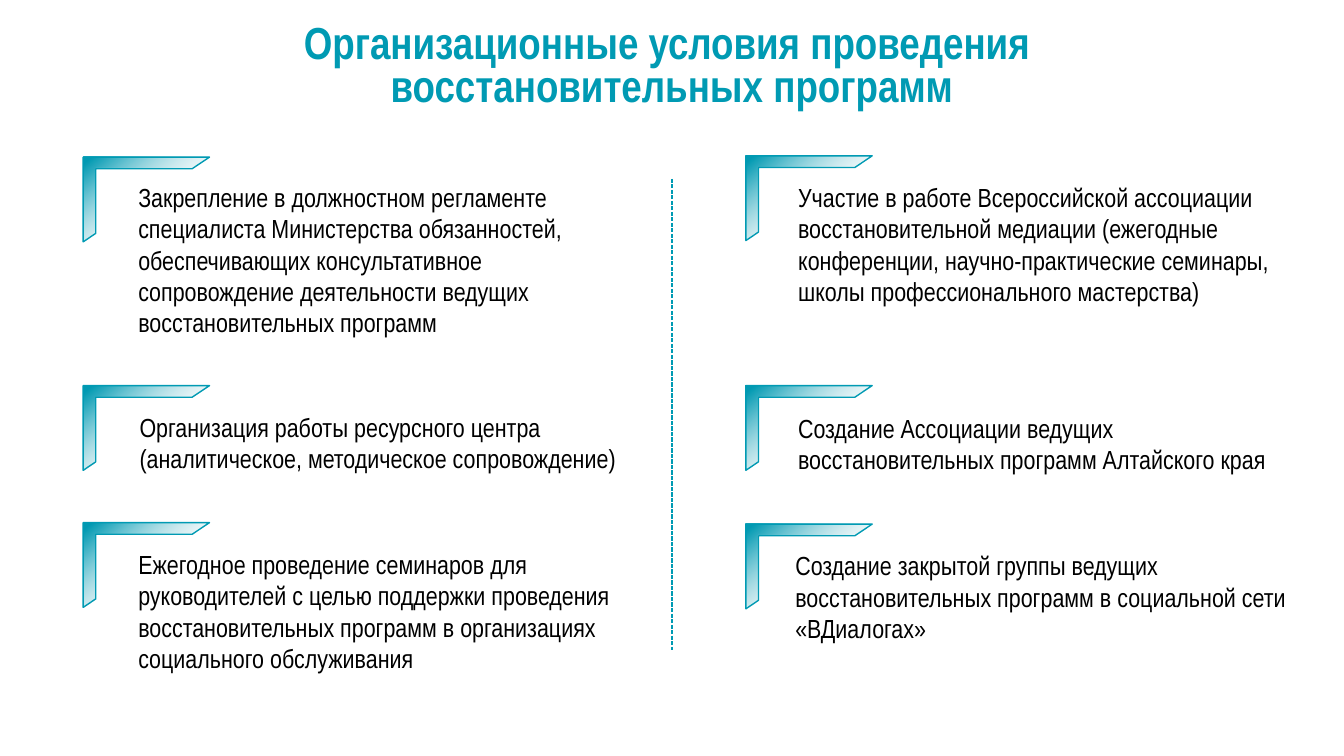
"""Build the slide on organisational conditions for restorative programmes."""
from dataclasses import dataclass

from lxml import etree
from pptx import Presentation
from pptx.dml.color import RGBColor
from pptx.enum.dml import MSO_LINE
from pptx.enum.shapes import MSO_CONNECTOR, MSO_SHAPE
from pptx.enum.text import MSO_ANCHOR, MSO_AUTO_SIZE, PP_ALIGN
from pptx.oxml.ns import qn
from pptx.util import Pt

HALF_FRAME = MSO_SHAPE.HALF_FRAME
STRAIGHT = MSO_CONNECTOR.STRAIGHT
SYS_DASH = MSO_LINE.SQUARE_DOT
TOP = MSO_ANCHOR.TOP
GROW = MSO_AUTO_SIZE.SHAPE_TO_FIT_TEXT
LEFT, CENTER = PP_ALIGN.LEFT, PP_ALIGN.CENTER

TEAL = RGBColor(0x00, 0x9A, 0xB3)
PALE = RGBColor(0xF2, 0xF2, 0xF2)
BLACK = RGBColor(0x00, 0x00, 0x00)
FONT = "Arial Narrow"

SLIDE_W, SLIDE_H = 720, 405
FRAME_W, FRAME_H = 67.7, 45.4
FRAME_LEFT, FRAME_RIGHT = 44.6, 399.6
TEXT_W = 283
GRADIENT = ((26, PALE, 0), (77, TEAL, 57), (96, TEAL, 100))


@dataclass
class Condition:
    """A statement with its corner frame; lengths in points."""
    frame_x: float
    frame_y: float
    x: float
    y: float
    h: float
    text: str


TITLE = ("Организационные условия проведения ", "восстановительных программ")
CONDITIONS = (
    Condition(FRAME_LEFT, 84.2, 67, 93.6, 92,
              "Закрепление в должностном регламенте специалиста Министерства "
              "обязанностей, обеспечивающих консультативное сопровождение "
              "деятельности ведущих восстановительных программ"),
    Condition(FRAME_LEFT, 206.6, 67.7, 216.7, 41,
              "Организация работы ресурсного центра "
              "(аналитическое, методическое сопровождение)"),
    Condition(FRAME_LEFT, 280, 67, 290.2, 75,
              "Ежегодное проведение семинаров для руководителей с целью "
              "поддержки проведения восстановительных программ в организациях "
              "социального обслуживания"),
    Condition(FRAME_RIGHT, 83.5, 420.5, 93.6, 75,
              "Участие в работе Всероссийской ассоциации восстановительной "
              "медиации (ежегодные конференции, научно-практические семинары, "
              "школы профессионального мастерства)"),
    Condition(FRAME_RIGHT, 206.6, 420.5, 217.4, 41,
              "Создание Ассоциации ведущих восстановительных программ "
              "Алтайского края"),
    Condition(FRAME_RIGHT, 280.8, 419, 290.9, 58,
              "Создание закрытой группы ведущих восстановительных программ "
              "в социальной сети «ВДиалогах»"),
)


def write_text(sp, *lines: str, size: float = 14, color: RGBColor = BLACK,
               bold: bool = False, align: PP_ALIGN = LEFT,
               spacing: float = 1.0) -> None:
    """Fill a shape with one formatted paragraph per line."""
    tf = sp.text_frame
    tf.word_wrap = True
    tf.auto_size = GROW
    tf.vertical_anchor = TOP
    for i, line in enumerate(lines):
        p = tf.add_paragraph() if i else tf.paragraphs[0]
        p.alignment = align
        p.line_spacing = spacing
        r = p.add_run()
        r.text = line
        r.font.name = FONT
        r.font.size = Pt(size)
        r.font.bold = bold
        r.font.color.rgb = color


def add_frame(s, x: float, y: float) -> None:
    """Draw a corner frame that fades away from its corner."""
    sp = s.shapes.add_shape(HALF_FRAME, Pt(x), Pt(y), Pt(FRAME_W), Pt(FRAME_H))
    sp.shadow.inherit = False
    sp.adjustments[0] = 0.138
    sp.adjustments[1] = 0.149
    sp.line.color.rgb = TEAL
    sp.line.width = Pt(0.75)
    sp.fill.gradient()
    sp.fill.gradient_angle = 130
    stops = next(sp._element.iter(qn("a:gsLst")))
    for old in list(stops):
        stops.remove(old)
    for pos, color, alpha in GRADIENT:
        gs = etree.SubElement(stops, qn("a:gs"), pos=str(pos * 1000))
        clr = etree.SubElement(gs, qn("a:srgbClr"), val=str(color))
        etree.SubElement(clr, qn("a:alpha"), val=str(alpha * 1000))


def add_condition(s, c: Condition) -> None:
    """Draw one statement and its frame."""
    sp = s.shapes.add_textbox(Pt(c.x), Pt(c.y), Pt(TEXT_W), Pt(c.h))
    write_text(sp, c.text)
    add_frame(s, c.frame_x, c.frame_y)


def add_divider(s, x: float, top: float, bottom: float) -> None:
    """Draw the dashed line between the columns."""
    line = s.shapes.add_connector(STRAIGHT, Pt(x), Pt(top), Pt(x), Pt(bottom))
    line.line.color.rgb = TEAL
    line.line.width = Pt(0.75)
    line.line.dash_style = SYS_DASH
    etree.SubElement(line._element.spPr, qn("a:effectLst"))


def main() -> None:
    """Build and save the slide."""
    prs = Presentation()
    prs.slide_width, prs.slide_height = Pt(SLIDE_W), Pt(SLIDE_H)
    s = prs.slides.add_slide(prs.slide_layouts[5])
    title = s.shapes.title
    title.left, title.top = Pt(0), Pt(10)
    title.width, title.height = Pt(SLIDE_W), Pt(54)
    write_text(title, *TITLE, size=24, color=TEAL, bold=True, align=CENTER,
               spacing=0.8)
    for c in CONDITIONS:
        add_condition(s, c)
    add_divider(s, SLIDE_W / 2, 95.8, 348.5)
    prs.save("out.pptx")


if __name__ == "__main__":
    main()
